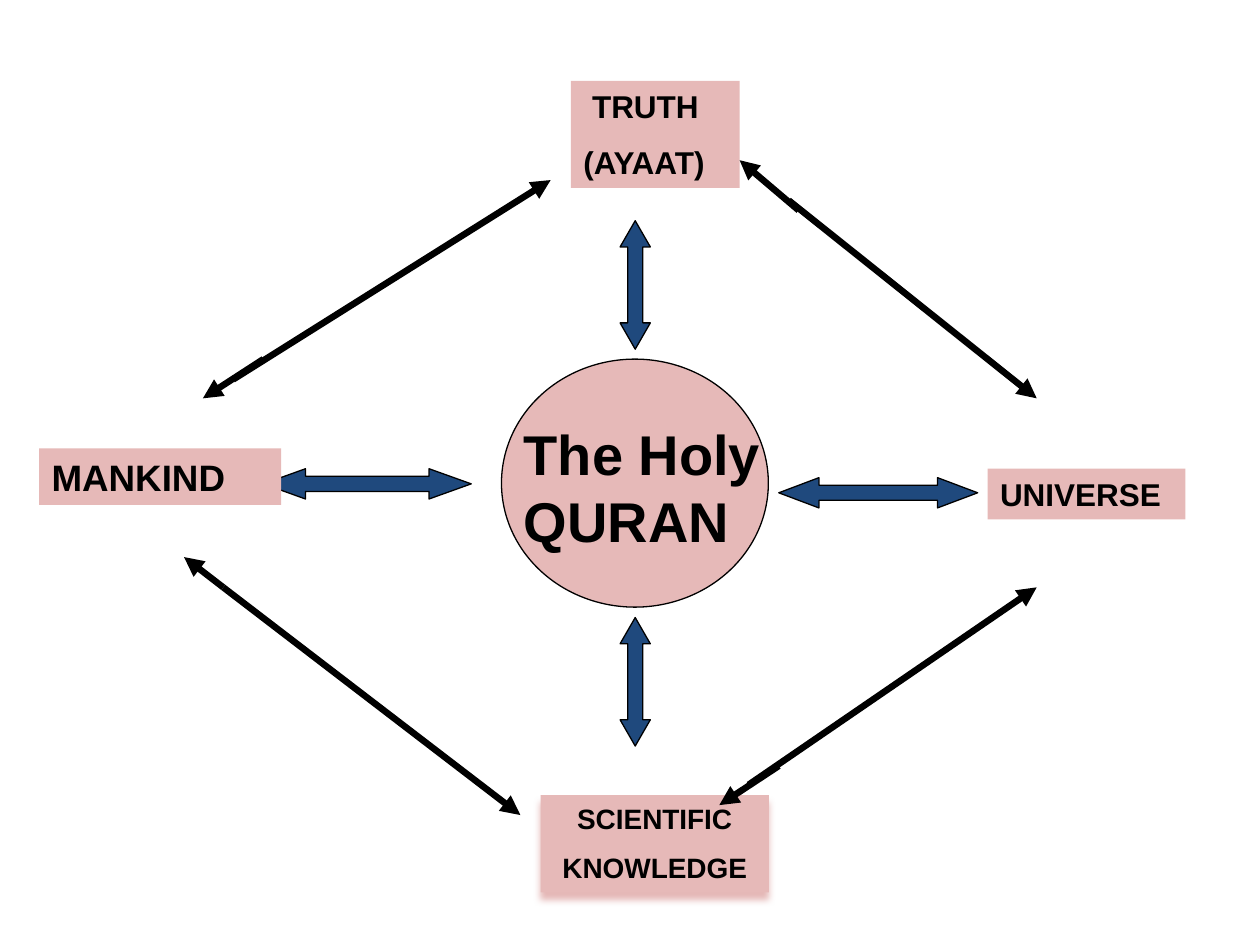
from typing import NamedTuple

import pptx
import pptx.dml.color
import pptx.enum.shapes
import pptx.enum.text
import pptx.oxml
import pptx.oxml.ns
import pptx.util
from pptx.util import Cm

RGBColor = pptx.dml.color.RGBColor
MSO_SHAPE = pptx.enum.shapes.MSO_SHAPE
ALIGN = pptx.enum.text.PP_ALIGN

PINK = RGBColor(0xE6, 0xB9, 0xB8)
NAVY = RGBColor(0x1F, 0x49, 0x7D)
BLACK = RGBColor(0, 0, 0)
ARROW_HEIGHT = 0.61


class Label(NamedTuple):
    left: float
    top: float
    width: float
    height: float
    size: int
    lines: tuple[str, ...]
    align: ALIGN = ALIGN.LEFT
    shadow: bool = False


class BlockArrow(NamedTuple):
    left: float
    top: float
    length: float
    head: float
    rotation: int = 0


class Arrow(NamedTuple):
    x1: float
    y1: float
    x2: float
    y2: float


BLOCK_ARROWS = [
    BlockArrow(11.51, 5.44, 2.59, 0.53, 90),
    BlockArrow(11.51, 13.44, 2.59, 0.53, 90),
    BlockArrow(15.7, 9.63, 4.01, 0.81),
    BlockArrow(5.31, 9.45, 4.19, 0.85),
]
CENTER = Label(10.31, 8.33, 5.56, 2.97, 32, ("The Holy QURAN",))
LABELS = [
    Label(0.79, 9.04, 4.88, 1.14, 21, ("MANKIND",)),
    Label(19.91, 9.45, 3.99, 1.02, 18, ("UNIVERSE",)),
    Label(10.9, 16.03, 4.6, 1.96, 16, ("SCIENTIFIC", "KNOWLEDGE"), ALIGN.CENTER, True),
    Label(11.51, 1.63, 3.4, 2.16, 18, (" TRUTH", "(AYAAT)")),
]
# Each side is a long arrow plus a short one pointing back the other way.
ARROWS = [
    Arrow(4.7, 7.65, 11.1, 3.63),
    Arrow(5.31, 7.24, 4.09, 8.03),
    Arrow(4.5, 11.84, 10.49, 16.43),
    Arrow(15.9, 4.04, 20.9, 8.03),
    Arrow(15.09, 15.82, 20.9, 11.84),
    Arrow(15.7, 15.44, 14.5, 16.23),
    Arrow(16.1, 4.24, 14.91, 3.23),
    Arrow(4.5, 11.84, 3.71, 11.23),
]


def add_outlined(s, kind: MSO_SHAPE, left: float, top: float,
                 width: float, height: float, fill: RGBColor):
    sp = s.shapes.add_shape(kind, Cm(left), Cm(top), Cm(width), Cm(height))
    sp.shadow.inherit = False
    sp.fill.solid()
    sp.fill.fore_color.rgb = fill
    sp.line.color.rgb = BLACK
    sp.line.width = pptx.util.Pt(0.75)
    return sp


def add_block_arrow(s, arrow: BlockArrow) -> None:
    sp = add_outlined(s, MSO_SHAPE.LEFT_RIGHT_ARROW, arrow.left, arrow.top,
                      arrow.length, ARROW_HEIGHT, NAVY)
    sp.adjustments[0] = 0.5
    sp.adjustments[1] = arrow.head / ARROW_HEIGHT
    sp.rotation = arrow.rotation


def write_text(sp, label: Label) -> None:
    tf = sp.text_frame
    tf.word_wrap = True
    tf.vertical_anchor = pptx.enum.text.MSO_ANCHOR.TOP
    for i, line in enumerate(label.lines):
        p = tf.add_paragraph() if i else tf.paragraphs[0]
        p.text = line
        p.alignment = label.align
        if i:
            p.space_before = pptx.util.Pt(round(label.size * 0.57, 1))
        p.font.name = "Arial"
        p.font.size = pptx.util.Pt(label.size)
        p.font.bold = True
        p.font.color.rgb = BLACK


def add_glow_shadow(sp) -> None:
    """Put a soft pink shadow straight below the shape."""
    effects = sp._element.spPr.find(pptx.oxml.ns.qn("a:effectLst"))
    effects.append(pptx.oxml.parse_xml(
        f'<a:outerShdw {pptx.oxml.ns.nsdecls("a")} blurRad="50800" dist="50800" '
        f'dir="5400000" rotWithShape="0"><a:srgbClr val="{PINK}"/></a:outerShdw>'))


def add_label(s, label: Label) -> None:
    sp = add_outlined(s, MSO_SHAPE.RECTANGLE, label.left, label.top,
                      label.width, label.height, PINK)
    sp.line.fill.background()
    if label.shadow:
        add_glow_shadow(sp)
    write_text(sp, label)


def add_arrow(s, arrow: Arrow) -> None:
    line = s.shapes.add_connector(pptx.enum.shapes.MSO_CONNECTOR.STRAIGHT,
                                  *(Cm(v) for v in arrow))
    line.line.color.rgb = BLACK
    line.line.width = pptx.util.Pt(3.75)
    ns = pptx.oxml.ns.nsdecls("a")
    line.line._get_or_add_ln().append(
        pptx.oxml.parse_xml(f'<a:tailEnd {ns} type="triangle"/>'))
    line._element.spPr.append(pptx.oxml.parse_xml(f"<a:effectLst {ns}/>"))


def main() -> None:
    prs = pptx.Presentation()
    prs.slide_width, prs.slide_height = Cm(25.4), Cm(19.05)
    s = prs.slides.add_slide(prs.slide_layouts[6])
    for block_arrow in BLOCK_ARROWS:
        add_block_arrow(s, block_arrow)
    add_outlined(s, MSO_SHAPE.OVAL, 10.11, 7.24, 5.38, 5, PINK)
    box = s.shapes.add_textbox(*(Cm(v) for v in CENTER[:4]))
    write_text(box, CENTER)
    for label in LABELS:
        add_label(s, label)
    for arrow in ARROWS:
        add_arrow(s, arrow)
    prs.save("out.pptx")


if __name__ == "__main__":
    main()
